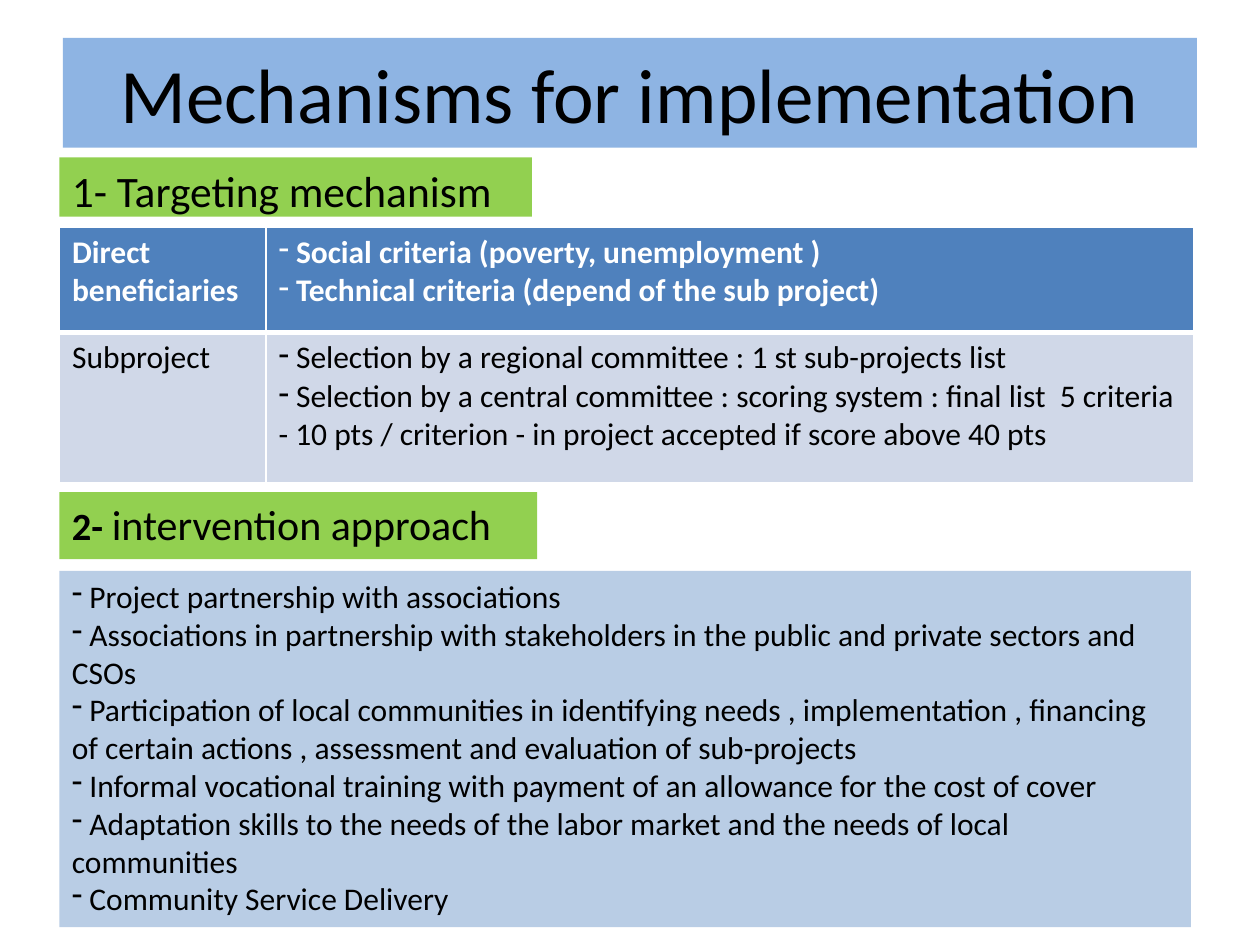
from lxml import etree
from pptx import Presentation
from pptx.dml.color import RGBColor
from pptx.enum.shapes import MSO_SHAPE
from pptx.enum.text import MSO_ANCHOR, PP_ALIGN
from pptx.oxml.ns import qn
from pptx.util import Pt

RECT = MSO_SHAPE.RECTANGLE
TOP, MIDDLE = MSO_ANCHOR.TOP, MSO_ANCHOR.MIDDLE
LEFT, CENTER = PP_ALIGN.LEFT, PP_ALIGN.CENTER

BLACK = RGBColor(0x00, 0x00, 0x00)
WHITE = RGBColor(0xFF, 0xFF, 0xFF)
SKY = RGBColor(0x8E, 0xB4, 0xE3)
GREEN = RGBColor(0x92, 0xD0, 0x50)
BLUE = RGBColor(0x4F, 0x81, 0xBD)
GREY = RGBColor(0xD0, 0xD8, 0xE8)
PALE = RGBColor(0xB9, 0xCD, 0xE5)

TARGETS = [
    ("Direct beneficiaries", [
        "Social criteria (poverty, unemployment )",
        "Technical criteria (depend of the sub project)",
    ]),
    ("Subproject", [
        "Selection by a regional committee : 1 st sub-projects list",
        "Selection by a central committee : scoring system : final list  5 criteria "
        "- 10 pts / criterion - in project accepted if score above 40 pts",
    ]),
]
ACTIONS = [
    "Project partnership with associations",
    "Associations in partnership with stakeholders in the public and private "
    "sectors and CSOs",
    "Participation of local communities in identifying needs , implementation , "
    "financing of certain actions , assessment and evaluation of sub-projects",
    "Informal vocational training with payment of an allowance for the cost of cover",
    "Adaptation skills to the needs of the labor market and the needs of local "
    "communities",
    "Community Service Delivery",
]


def style(run, size, color=BLACK, bold=False):
    font = run.font
    font.name, font.size, font.bold = "Calibri", Pt(size), bold
    font.color.rgb = color


def add_dash(para):
    props = para._p.get_or_add_pPr()
    props.set("marL", "0")
    props.set("indent", "0")
    etree.SubElement(props, qn("a:buChar")).set("char", "-")


def fill_list(frame, items, color=BLACK, bold=False):
    """Write the items as paragraphs with dash bullets."""
    frame.text = "\n".join(" " + item for item in items)
    for para in frame.paragraphs:
        para.alignment = LEFT
        add_dash(para)
        style(para.runs[0], 18, color, bold)


def add_panel(slide, box, color, anchor=TOP):
    """Add a plain filled rectangle and return its text frame."""
    panel = slide.shapes.add_shape(RECT, *map(Pt, box))
    panel.shadow.inherit = False
    panel.fill.solid()
    panel.fill.fore_color.rgb = color
    panel.line.fill.background()
    frame = panel.text_frame
    frame.word_wrap = True
    frame.vertical_anchor = anchor
    return frame


def add_title(slide, box):
    frame = add_panel(slide, box, SKY, MIDDLE)
    frame.text = "Mechanisms for implementation"
    para = frame.paragraphs[0]
    para.alignment = CENTER
    style(para.runs[0], 44)


def add_heading(slide, box, parts):
    """Add a green heading; parts are (text, size, bold)."""
    para = add_panel(slide, box, GREEN).paragraphs[0]
    para.alignment = LEFT
    para.space_before = Pt(5)
    props = para._p.get_or_add_pPr()
    props.set("marL", str(Pt(27)))
    props.set("indent", str(-Pt(27)))
    for text, size, bold in parts:
        run = para.add_run()
        run.text = text
        style(run, size, bold=bold)


def set_cell(cell, fill, base):
    """Fill a cell and give it white borders, the lower one base points wide."""
    props = cell._tc.get_or_add_tcPr()
    for side, width in (("L", 1), ("R", 1), ("T", 1), ("B", base)):
        line = etree.SubElement(props, qn("a:ln" + side), w=str(Pt(width)))
        solid = etree.SubElement(line, qn("a:solidFill"))
        etree.SubElement(solid, qn("a:srgbClr"), val=str(WHITE))
    cell.fill.solid()
    cell.fill.fore_color.rgb = fill


def add_targets(slide, box):
    table = slide.shapes.add_table(2, 2, *map(Pt, box)).table
    for col, width in zip(table.columns, (118, box[2] - 118)):
        col.width = Pt(width)
    for row, height in zip(table.rows, (60.5, box[3] - 60.5)):
        row.height = Pt(height)
    looks = [(BLUE, WHITE, True, 3), (GREY, BLACK, False, 1)]
    for row, (label, items), look in zip(table.rows, TARGETS, looks):
        fill, color, bold, base = look
        name, notes = row.cells
        name.text_frame.text = label
        style(name.text_frame.paragraphs[0].runs[0], 18, color, bold)
        fill_list(notes.text_frame, items, color, bold)
        for cell in (name, notes):
            set_cell(cell, fill, base)


def add_actions(slide, box):
    fill_list(add_panel(slide, box, PALE), ACTIONS)


def main():
    prs = Presentation()
    prs.slide_width, prs.slide_height = Pt(720), Pt(540)
    slide = prs.slides.add_slide(prs.slide_layouts[6])
    left = 34
    add_title(slide, (36, 21.6, 648, 62.8))
    add_heading(slide, (left, 90, 270, 33.8),
                [("1- Targeting mechanism", 24.8, False)])
    add_targets(slide, (left, 129.6, 648, 146))
    add_heading(slide, (left, 281.3, 273, 38.2),
                [("2- ", 22, True), ("intervention approach", 24, False)])
    add_actions(slide, (left, 326.2, 646.6, 203.6))
    prs.save("out.pptx")


if __name__ == "__main__":
    main()
